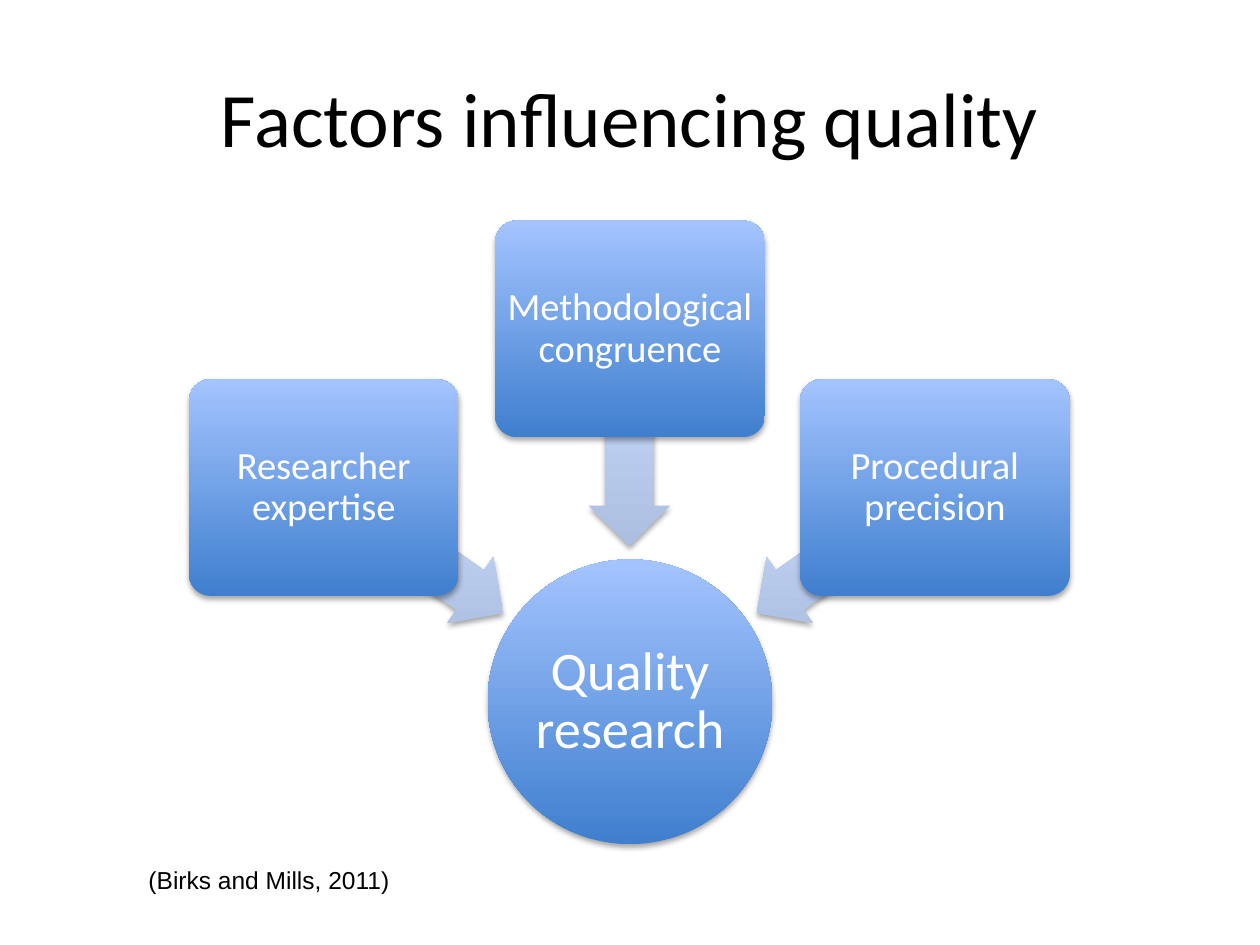
from lxml.etree import SubElement
from pptx import Presentation
from pptx.dml.color import RGBColor
from pptx.enum.shapes import MSO_SHAPE
from pptx.enum.text import MSO_ANCHOR, PP_ALIGN
from pptx.oxml.ns import qn
from pptx.util import Emu, Pt

PX = 9144  # EMU per px, 100 px to the inch
BLUE = ("3F7FCE", "A4C4FF")  # bottom, top
PALE = ("ADBFE1", "CCDDFF")
BOX_WIDTH, BOX_HEIGHT = 214, 172
ARROW_WIDTH, ARROW_HEIGHT = 173, 64

# label, box left and top, arrow left and top, arrow rotation
FACTORS = [
    ("Researcher expertise", (150, 301), (242, 405), 215),
    ("Methodological congruence", (393, 175), (413, 315), 270),
    ("Procedural precision", (635, 301), (585, 405), 325),
]


def px(*lengths):
    return [Emu(length * PX) for length in lengths]


def color(hex_code):
    return RGBColor.from_string(hex_code)


def add_run(paragraph, text, size, hex_code, font="Calibri"):
    run = paragraph.add_run()
    run.text = text
    run.font.size = Pt(size)
    run.font.name = font
    run.font.color.rgb = color(hex_code)


def add_soft_shadow(shape):
    shape.shadow.inherit = False
    effects = shape._element.spPr.find(qn("a:effectLst"))
    shadow = SubElement(effects, qn("a:outerShdw"), blurRad="40000",
                        dist="23000", dir="5400000", rotWithShape="0")
    black = SubElement(shadow, qn("a:srgbClr"), val="000000")
    SubElement(black, qn("a:alpha"), val="35000")


def add_gradient_shape(slide, preset, bounds, gradient, adjustments=()):
    shape = slide.shapes.add_shape(preset, *px(*bounds))
    for index, value in enumerate(adjustments):
        shape.adjustments[index] = value
    shape.fill.gradient()
    shape.fill.gradient_angle = 90
    for stop, hex_code in zip(shape.fill.gradient_stops, gradient):
        stop.color.rgb = color(hex_code)
    # Keep the light side on top when the shape is turned
    shape._element.spPr.find(qn("a:gradFill")).set("rotWithShape", "0")
    shape.line.fill.background()
    add_soft_shadow(shape)
    return shape


def add_label(shape, text, size, inset):
    frame = shape.text_frame
    frame.word_wrap = True
    frame.vertical_anchor = MSO_ANCHOR.MIDDLE
    frame.margin_left = frame.margin_right = px(inset)[0]
    frame.margin_top = frame.margin_bottom = px(inset)[0]
    paragraph = frame.paragraphs[0]
    paragraph.alignment = PP_ALIGN.CENTER
    paragraph.line_spacing = 0.9
    add_run(paragraph, text, size, "FFFFFF")


def add_title(slide, text):
    title = slide.shapes.title
    title.left, title.top, title.width, title.height = px(50, 30, 900, 125)
    title.text_frame.vertical_anchor = MSO_ANCHOR.MIDDLE
    paragraph = title.text_frame.paragraphs[0]
    paragraph.alignment = PP_ALIGN.CENTER
    add_run(paragraph, text, 44, "000000")


def add_factor(slide, label, box_at, arrow_at, rotation):
    arrow = add_gradient_shape(slide, MSO_SHAPE.LEFT_ARROW,
                               (*arrow_at, ARROW_WIDTH, ARROW_HEIGHT), PALE, (0.6, 0.5))
    arrow.rotation = rotation
    box = add_gradient_shape(slide, MSO_SHAPE.ROUNDED_RECTANGLE,
                             (*box_at, BOX_WIDTH, BOX_HEIGHT), BLUE, (0.1,))
    # A narrow inset keeps the longest word on one line
    add_label(box, label, 22, 3)


def add_citation(slide, text):
    citation = slide.shapes.add_textbox(*px(108, 682, 512, 34))
    citation.text_frame.word_wrap = True
    add_run(citation.text_frame.paragraphs[0], text, 14, "000000", "Arial")


def main():
    presentation = Presentation()
    presentation.slide_width, presentation.slide_height = px(1000, 750)
    slide = presentation.slides.add_slide(presentation.slide_layouts[5])
    add_title(slide, "Factors influencing quality")

    # Central outcome
    outcome = add_gradient_shape(slide, MSO_SHAPE.OVAL, (387, 444, 226, 226), BLUE)
    add_label(outcome, "Quality research", 31, 2)

    # Factors pointing to the outcome
    for factor in FACTORS:
        add_factor(slide, *factor)

    add_citation(slide, "(Birks and Mills, 2011)")
    presentation.save("out.pptx")


if __name__ == "__main__":
    main()
